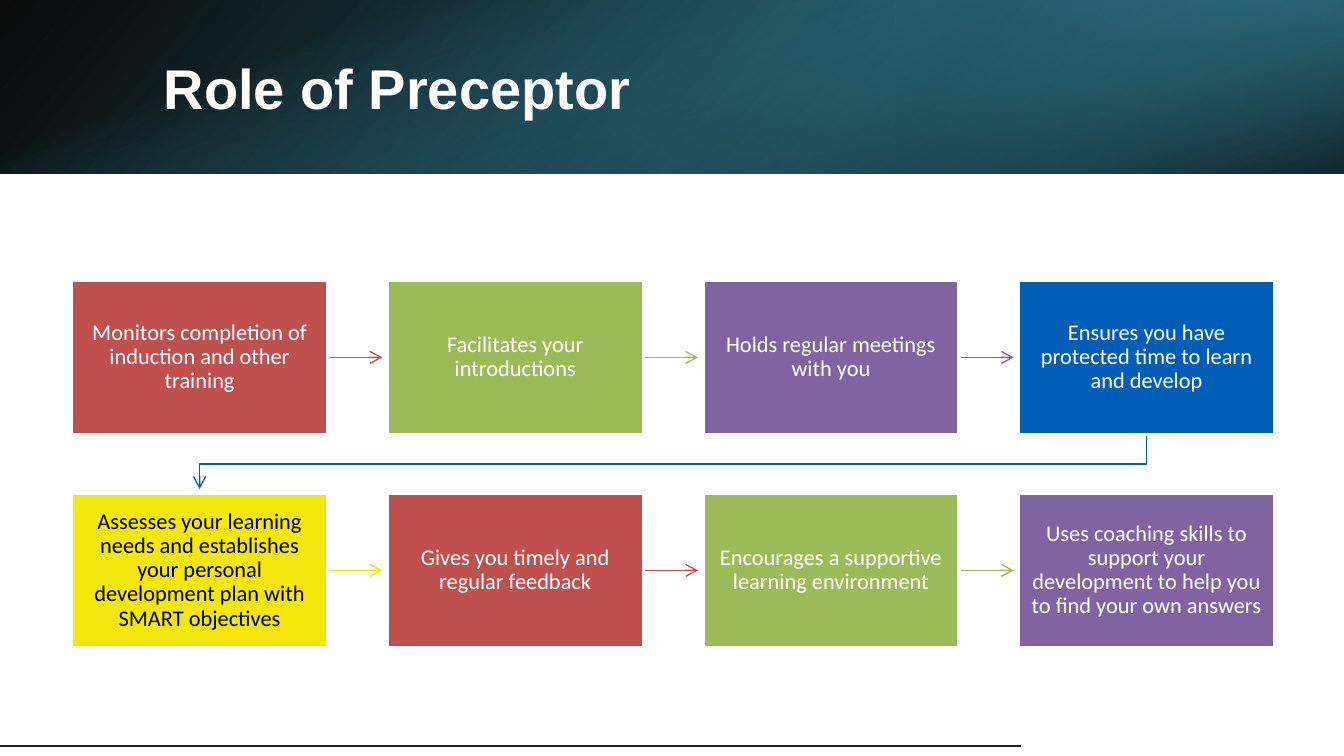
from lxml.etree import SubElement
from pptx import Presentation
from pptx.dml.color import RGBColor
from pptx.enum.shapes import MSO_CONNECTOR, MSO_SHAPE
from pptx.enum.text import MSO_ANCHOR, MSO_AUTO_SIZE, PP_ALIGN
from pptx.oxml.ns import qn
from pptx.util import Pt

COLORS = {
    "red": "C0504D", "green": "9BBB59", "purple": "8064A2", "blue": "005EB8",
    "yellow": "F3E70C", "white": "FFFFFF", "black": "000000", "rule": "212121",
    "teal": "31859C", "deep": "215968", "aqua": "4BACC6",
}
STEPS = [
    ("red", "Monitors completion of induction and other training"),
    ("green", "Facilitates your introductions"),
    ("purple", "Holds regular meetings with you"),
    ("blue", "Ensures you have protected time to learn and develop"),
    ("yellow", "Assesses your learning needs and establishes your personal "
               "development plan with SMART objectives"),
    ("red", "Gives you timely and regular feedback"),
    ("green", "Encourages a supportive learning environment"),
    ("purple", "Uses coaching skills to support your development to help you "
               "to find your own answers"),
]
BANDS = [
    ((0, 0, 720, 93), 0, True, 140, [(0, "black", 96), (1, "teal", 100)]),
    ((480, 0, 240, 93), 180, True, 320, [(0.19, "deep", 68), (1, "aqua", 79)]),
    ((313.5, -313.5, 93, 720), 90, False, 340,
     [(0.23, "aqua", 0), (0.99, "black", 74)]),
]
COLS = 4
LEFT, TOP, WIDE, HIGH = 38.2, 150.2, 137.5, 82.6
STEP_X, STEP_Y = 169.1, 114.1
REACH = 29.2


def rgb(name):
    return RGBColor.from_string(COLORS[name])


def apply(item, values):
    for key, value in values.items():
        setattr(item, key, value)


class Deck:
    head = {"name": "Arial", "size": Pt(30), "bold": True}
    body = {"name": "Calibri", "size": Pt(12), "bold": False}
    frame = {
        "word_wrap": True, "auto_size": MSO_AUTO_SIZE.NONE,
        "vertical_anchor": MSO_ANCHOR.MIDDLE,
    }
    inset = {
        "margin_left": Pt(6.7), "margin_right": Pt(6.7),
        "margin_top": Pt(7), "margin_bottom": Pt(7),
    }

    def __init__(self, show):
        self.slide = show.slides.add_slide(show.slide_layouts[5])
        self.shapes = self.slide.shapes

    def rect(self, area):
        shape = self.shapes.add_shape(MSO_SHAPE.RECTANGLE, *map(Pt, area))
        shape.shadow.inherit = False
        return shape

    def label(self, shape, text, font, color, frame, para):
        apply(shape.text_frame, frame)
        shape.text_frame.text = text
        line = shape.text_frame.paragraphs[0]
        apply(line, para)
        apply(line.font, font)
        line.font.color.rgb = rgb(color)

    def title(self, text, area):
        shape = self.shapes.title
        apply(shape, dict(zip(("left", "top", "width", "height"), map(Pt, area))))
        self.label(shape, text, self.head, "white", self.frame,
                   {"alignment": PP_ALIGN.LEFT})
        self.shapes[-1]._element.addnext(shape._element)

    def band(self, area, turn, flip, angle, stops):
        shape = self.rect(area)
        shape.rotation = turn
        if flip:
            shape._element.spPr.find(qn("a:xfrm")).set("flipH", "1")
        shape.line.fill.background()
        shape.fill.gradient()
        shape.fill.gradient_angle = 360 - angle
        for stop, (place, color, _) in zip(shape.fill.gradient_stops, stops):
            stop.position = place
            stop.color.rgb = rgb(color)
        tints = shape._element.spPr.iter(qn("a:srgbClr"))
        for tint, (_, _, alpha) in zip(tints, stops):
            SubElement(tint, qn("a:alpha")).set("val", str(alpha * 1000))

    def box(self, area, color, text):
        shape = self.rect(area)
        shape.fill.solid()
        shape.fill.fore_color.rgb = rgb(color)
        shape.line.color.rgb = rgb("white")
        shape.line.width = Pt(2)
        ink = "black" if color == "yellow" else "white"
        self.label(shape, text, self.body, ink, self.frame | self.inset,
                   {"alignment": PP_ALIGN.CENTER, "line_spacing": 0.9})
        return shape

    def stroke(self, shape, color, arrow=True):
        shape.line.color.rgb = rgb(color)
        shape.line.width = Pt(0.75)
        if arrow:
            edge = shape._element.spPr.find(qn("a:ln"))
            SubElement(edge, qn("a:tailEnd")).set("type", "arrow")

    def line(self, start, end, color, arrow=True):
        link = self.shapes.add_connector(
            MSO_CONNECTOR.STRAIGHT, *map(Pt, (*start, *end)))
        self.stroke(link, color, arrow)
        SubElement(link._element.spPr, qn("a:effectLst"))
        return link

    def arrow(self, box, start, color):
        x, y = start
        link = self.line(start, (x + REACH, y), color)
        link.begin_connect(box, 3)
        box._element.addprevious(link._element)

    def bend(self, box, points, color):
        first, *rest = [tuple(map(Pt, point)) for point in points]
        pen = self.shapes.build_freeform(*first)
        pen.add_line_segments(rest, close=False)
        route = pen.convert_to_shape()
        route.shadow.inherit = False
        route.fill.background()
        self.stroke(route, color)
        box._element.addprevious(route._element)


def main():
    show = Presentation()
    show.slide_width, show.slide_height = Pt(720), Pt(405)
    deck = Deck(show)
    deck.line((547.2, 399.6), (0, 399.6), "rule", arrow=False)
    for band in BANDS:
        deck.band(*band)
    deck.title("Role of Preceptor", (80.6, 20.9, 593.3, 51.8))
    for i, (color, text) in enumerate(STEPS):
        row, col = divmod(i, COLS)
        x, y = LEFT + col * STEP_X, TOP + row * STEP_Y
        box = deck.box((x, y, WIDE, HIGH), color, text)
        if col < COLS - 1:
            deck.arrow(box, (x + WIDE, y + HIGH / 2), color)
        elif i < len(STEPS) - 1:
            mid, base, home = x + WIDE / 2, y + HIGH, LEFT + WIDE / 2
            turn = base + (STEP_Y - HIGH) / 2
            deck.bend(box, [(mid, base), (mid, turn), (home, turn),
                            (home, base + REACH)], color)
    show.save("out.pptx")


if __name__ == "__main__":
    main()
